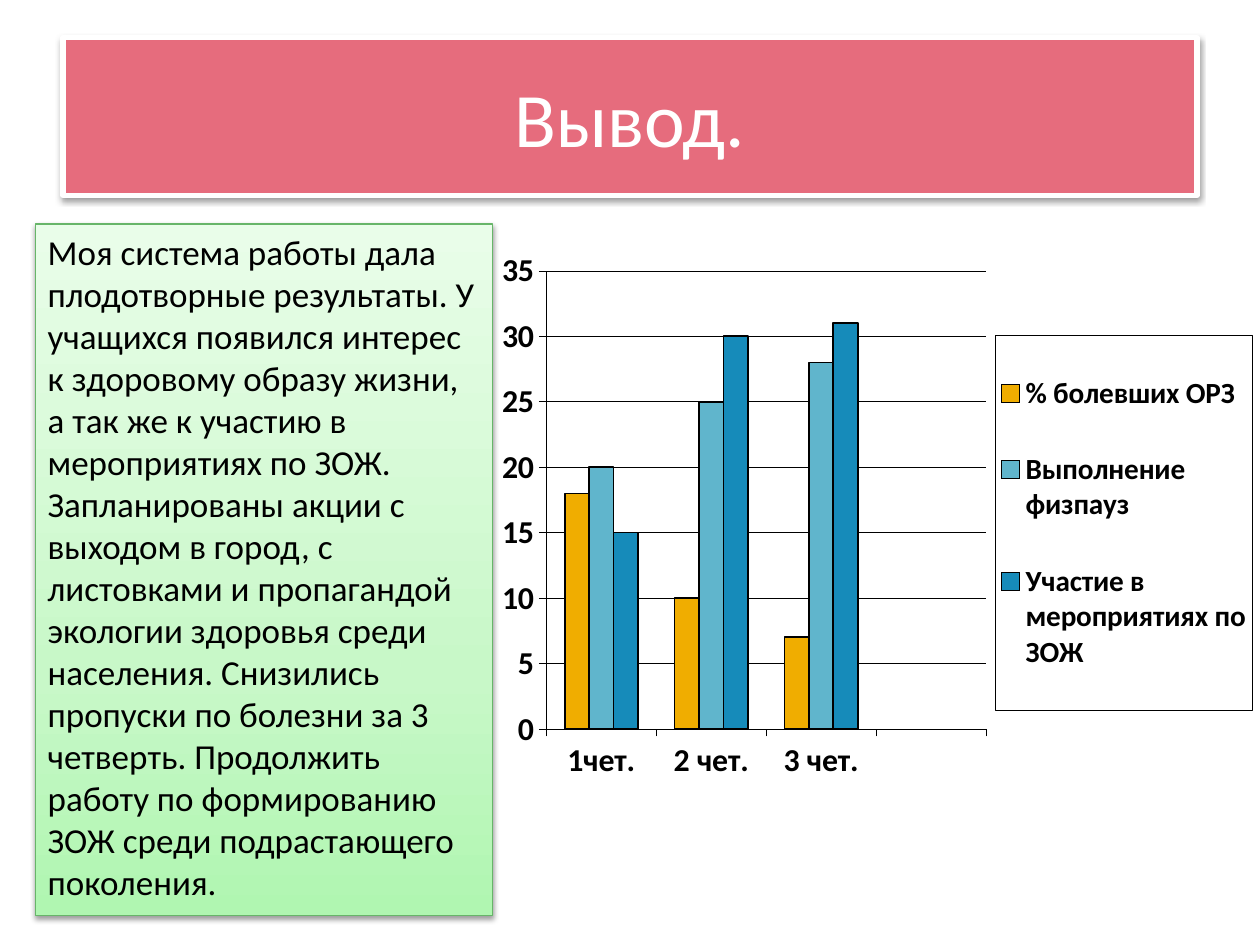
from lxml import etree
from pptx import Presentation
from pptx.chart.data import CategoryChartData
from pptx.dml.color import RGBColor
from pptx.enum.chart import XL_CHART_TYPE, XL_LEGEND_POSITION, XL_TICK_LABEL_POSITION, XL_TICK_MARK
from pptx.enum.shapes import MSO_SHAPE
from pptx.enum.text import MSO_ANCHOR, PP_ALIGN
from pptx.oxml import parse_xml
from pptx.oxml.ns import nsdecls, qn
from pptx.util import Inches, Pt

COLUMN = XL_CHART_TYPE.COLUMN_CLUSTERED
LEGEND_RIGHT = XL_LEGEND_POSITION.RIGHT
LABELS_LOW = XL_TICK_LABEL_POSITION.LOW
TICK_OUT = XL_TICK_MARK.OUTSIDE
RECTANGLE = MSO_SHAPE.RECTANGLE
TOP, MIDDLE = MSO_ANCHOR.TOP, MSO_ANCHOR.MIDDLE
LEFT, CENTER = PP_ALIGN.LEFT, PP_ALIGN.CENTER

FONT = "Calibri"
BLACK, WHITE = "000000", "FFFFFF"
WIDTH, HEIGHT = 10, 7.5
TITLE_BOX = (0.05, 0.04, 0.9, 0.167)
CONCLUSION_BOX = (0.028, 0.237, 0.363, 0.732)
CHART_BOX = (0.391, 0.249, 0.609, 0.607)
PLOT_LAYOUT = (0.07, 0.062, 0.573, 0.799)
LEGEND_LAYOUT = (0.655, 0.174, 0.335, 0.655)
GREEN_STOPS = ((0, "B0F6B1"), (35, "C8F8C8"), (100, "E9FDE9"))

CONCLUSION = (
    "Моя система работы дала плодотворные результаты. У учащихся появился интерес "
    "к здоровому образу жизни, а так же к участию в мероприятиях по ЗОЖ. "
    "Запланированы акции с выходом в город, с листовками и пропагандой экологии "
    "здоровья среди населения. Снизились пропуски по болезни за 3 четверть. "
    "Продолжить работу по формированию ЗОЖ среди подрастающего поколения."
)
QUARTERS = ("1чет.", "2 чет.", "3 чет.", "")
RESULTS = (
    ("% болевших ОРЗ", (18, 10, 7, None), "F0AD00"),
    ("Выполнение физпауз", (20, 25, 28, None), "60B5CC"),
    ("Участие в мероприятиях по ЗОЖ", (15, 30, 31, None), "168BBA"),
)


def rgb(value):
    """Turn a hex string into a colour."""
    return RGBColor.from_string(value)


def place(box):
    """Turn shares of the slide into lengths."""
    return [Inches(share * side) for share, side in zip(box, (WIDTH, HEIGHT) * 2)]


def set_line(line, color, width):
    """Give a line its colour and width in points."""
    line.color.rgb = rgb(color)
    line.width = Pt(width)


def set_font(font, size, color, bold=False):
    """Apply the slide's typeface with the given format."""
    for key, value in {"name": FONT, "size": Pt(size), "bold": bold}.items():
        setattr(font, key, value)
    font.color.rgb = rgb(color)


def add_shadow(shape):
    """Add a soft shadow below a shape."""
    shape.shadow.inherit = False
    effects = shape._element.spPr.find(qn("a:effectLst"))
    effects.append(parse_xml(
        f'<a:outerShdw {nsdecls("a")} blurRad="40000" dist="20000" dir="5400000" rotWithShape="0">'
        '<a:srgbClr val="000000"><a:alpha val="38000"/></a:srgbClr></a:outerShdw>'
    ))


def fill_gradient(shape, stops):
    """Fill a shape with colour stops running from bottom to top."""
    shape.fill.gradient()
    shape.fill.gradient_angle = 90
    stop_list = shape._element.spPr.find(qn("a:gradFill")).find(qn("a:gsLst"))
    for old_stop in list(stop_list):
        stop_list.remove(old_stop)
    for position, color in stops:
        stop = etree.SubElement(stop_list, qn("a:gs"), pos=str(position * 1000))
        etree.SubElement(stop, qn("a:srgbClr"), val=color)


def add_panel(slide, box, text, size, color, anchor, align):
    """Add a shadowed rectangle with one paragraph."""
    panel = slide.shapes.add_shape(RECTANGLE, *place(box))
    add_shadow(panel)
    frame = panel.text_frame
    frame.word_wrap = True
    frame.vertical_anchor = anchor
    paragraph = frame.paragraphs[0]
    paragraph.alignment = align
    run = paragraph.add_run()
    run.text = text
    set_font(run.font, size, color)
    return panel


def add_title(slide, box):
    """Add the title banner."""
    banner = add_panel(slide, box, "Вывод.", 44, WHITE, MIDDLE, CENTER)
    banner.fill.solid()
    banner.fill.fore_color.rgb = rgb("E66C7D")
    set_line(banner.line, WHITE, 3)


def add_conclusion(slide, box):
    """Add the green panel with the conclusion."""
    panel = add_panel(slide, box, CONCLUSION, 20, BLACK, TOP, LEFT)
    fill_gradient(panel, GREEN_STOPS)
    set_line(panel.line, "67B569", 0.75)


def manual_layout(shares, inner=False):
    """Build a chart layout element from shares of the chart."""
    layout = parse_xml(f'<c:layout {nsdecls("c")}><c:manualLayout/></c:layout>')
    values = {"layoutTarget": "inner"} if inner else {}
    values.update({"xMode": "edge", "yMode": "edge"})
    values.update(zip("xywh", map(str, shares)))
    for key, value in values.items():
        etree.SubElement(layout[0], qn(f"c:{key}"), val=value)
    return layout


def replace_layout(parent, layout, index):
    """Put a layout element into a chart part in place of any other."""
    for old_layout in parent.findall(qn("c:layout")):
        parent.remove(old_layout)
    parent.insert(index, layout)


def format_legend(chart):
    """Place and frame the legend."""
    chart.has_legend = True
    legend = chart.legend
    legend.position = LEGEND_RIGHT
    legend.include_in_layout = False
    set_font(legend.font, 16.7, BLACK, True)
    replace_layout(legend._element, manual_layout(LEGEND_LAYOUT), 1)
    frame = parse_xml(
        f'<c:spPr {nsdecls("c", "a")}><a:noFill/><a:ln w="3175"><a:solidFill>'
        f'<a:srgbClr val="{BLACK}"/></a:solidFill></a:ln></c:spPr>'
    )
    legend._element.find(qn("c:txPr")).addprevious(frame)


def add_results_chart(slide, box):
    """Add the column chart of results by quarter."""
    data = CategoryChartData()
    data.categories = QUARTERS
    for name, values, _ in RESULTS:
        data.add_series(name, values)
    chart = slide.shapes.add_chart(COLUMN, *place(box), data).chart
    chart.has_title = False
    set_font(chart.font, 18.2, BLACK, True)
    plot = chart.plots[0]
    plot.gap_width = 150
    plot.vary_by_categories = False
    for series, (_, _, color) in zip(plot.series, RESULTS):
        series.format.fill.solid()
        series.format.fill.fore_color.rgb = rgb(color)
        set_line(series.format.line, BLACK, 1)
    for axis in (chart.category_axis, chart.value_axis):
        axis.major_tick_mark = TICK_OUT
        set_font(axis.tick_labels.font, 18.2, BLACK, True)
        set_line(axis.format.line, BLACK, 0.25)
    chart.category_axis.tick_label_position = LABELS_LOW
    scale = {"minimum_scale": 0, "maximum_scale": 35, "major_unit": 5}
    for key, value in scale.items():
        setattr(chart.value_axis, key, value)
    set_line(chart.value_axis.major_gridlines.format.line, BLACK, 0.25)
    plot_area = chart._chartSpace.chart.plotArea
    replace_layout(plot_area, manual_layout(PLOT_LAYOUT, inner=True), 0)
    format_legend(chart)


def main():
    """Build the slide and save it."""
    deck = Presentation()
    deck.slide_width, deck.slide_height = Inches(WIDTH), Inches(HEIGHT)
    slide = deck.slides.add_slide(deck.slide_layouts[6])
    add_title(slide, TITLE_BOX)
    add_conclusion(slide, CONCLUSION_BOX)
    add_results_chart(slide, CHART_BOX)
    deck.save("out.pptx")


if __name__ == "__main__":
    main()
